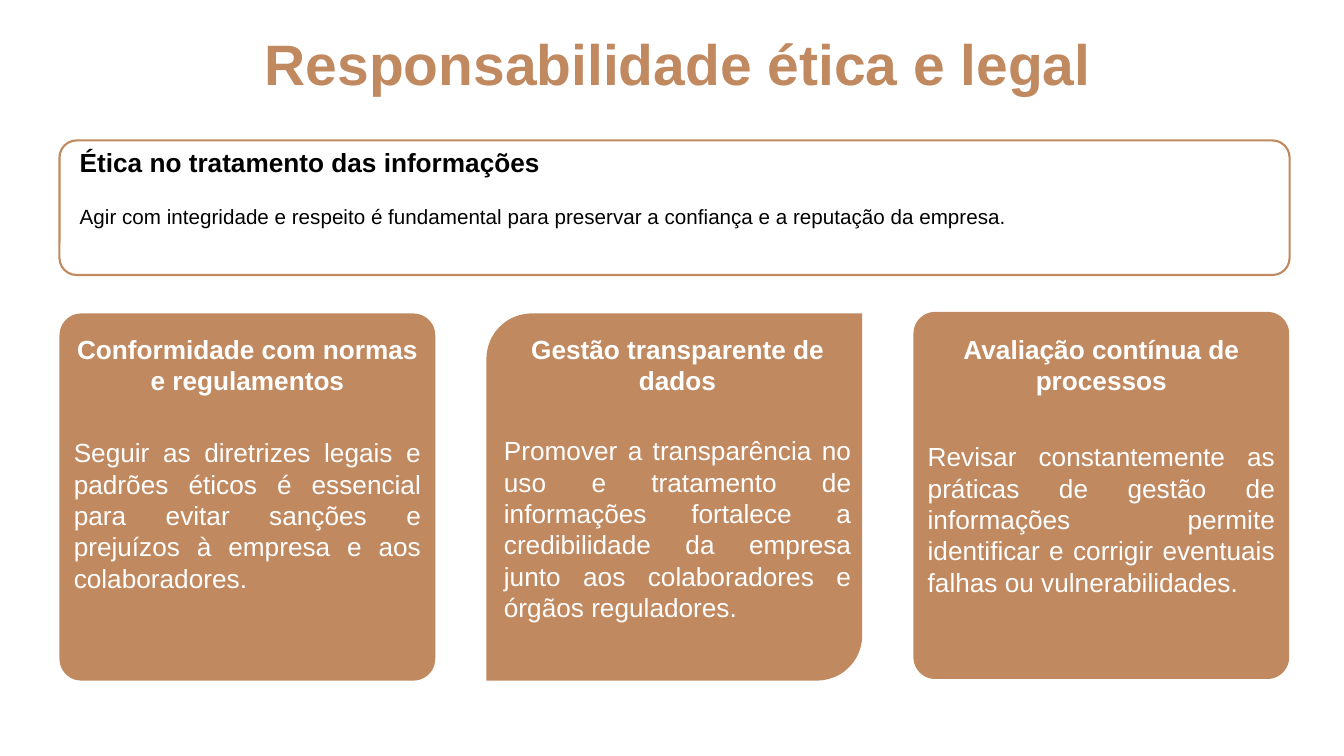
from dataclasses import dataclass

from pptx import Presentation
from pptx.dml.color import RGBColor
from pptx.enum.shapes import MSO_SHAPE as SHAPE
from pptx.enum.text import MSO_AUTO_SIZE as AUTO, PP_ALIGN as ALIGN
from pptx.util import Cm, Pt


@dataclass(frozen=True)
class Theme:
    font: str = "Arial"
    accent: RGBColor = RGBColor(0xC1, 0x89, 0x60)
    dark: RGBColor = RGBColor(0, 0, 0)
    light: RGBColor = RGBColor(0xFF, 0xFF, 0xFF)
    title: float = 40.7
    heading: float = 18.7
    note: float = 14.7
    line: float = 1.5


class Builder:
    def __init__(self, slide, theme):
        self.s = slide
        self.theme = theme

    def panel(self, kind, x, y, w, h, radius, filled=True):
        sp = self.s.shapes.add_shape(kind, Cm(x), Cm(y), Cm(w), Cm(h))
        sp.adjustments[0] = radius / min(w, h)
        sp.shadow.inherit = False
        if filled:
            sp.fill.solid()
            sp.fill.fore_color.rgb = self.theme.accent
            sp.line.fill.background()
        else:
            sp.fill.background()
            sp.line.color.rgb = self.theme.accent
            sp.line.width = Pt(self.theme.line)

    def text(self, text, x, y, w, h, size, color, align, bold=False, spacing=None):
        tf = self.s.shapes.add_textbox(Cm(x), Cm(y), Cm(w), Cm(h)).text_frame
        tf.word_wrap = True
        tf.auto_size = AUTO.SHAPE_TO_FIT_TEXT
        tf.margin_left = tf.margin_right = Cm(0.36)
        tf.margin_top = tf.margin_bottom = Cm(0.36)
        tf.text = text
        p = tf.paragraphs[0]
        p.alignment = align
        p.space_before = Pt(5)
        if spacing:
            p.line_spacing = spacing
        font = p.runs[0].font
        font.name = self.theme.font
        font.size = Pt(size)
        font.bold = bold
        font.color.rgb = color


ROUND, DIAGONAL = SHAPE.ROUNDED_RECTANGLE, SHAPE.ROUND_2_DIAG_RECTANGLE
LEFT, CARD_W, CARD_H, PITCH = 1.5, 9.47, 9.25, 10.76
TEXT_LEFT, TEXT_W = 1.65, 30.86

# Outline, corner radius, top, text shift, body top, body height, heading, body
CARDS = [
    (ROUND, 0.55, 7.9, 0, 10.64, 4.7, "Conformidade com normas e regulamentos",
     "Seguir as diretrizes legais e padrões éticos é essencial para evitar "
     "sanções e prejuízos à empresa e aos colaboradores."),
    (DIAGONAL, 1.14, 7.9, 0.08, 10.59, 5.51, "Gestão transparente de dados",
     "Promover a transparência no uso e tratamento de informações fortalece a "
     "credibilidade da empresa junto aos colaboradores e órgãos reguladores."),
    (ROUND, 0.55, 7.86, 0, 10.74, 4.7, "Avaliação contínua de processos",
     "Revisar constantemente as práticas de gestão de informações permite "
     "identificar e corrigir eventuais falhas ou vulnerabilidades."),
]


def main():
    prs = Presentation()
    prs.slide_width, prs.slide_height = Cm(33.87), Cm(19.05)
    theme = Theme()
    b = Builder(prs.slides.add_slide(prs.slide_layouts[6]), theme)

    # Title
    b.text("Responsabilidade ética e legal", TEXT_LEFT, 0.69, TEXT_W, 2.13,
           theme.title, theme.accent, ALIGN.CENTER, bold=True, spacing=0.8)

    # Framed introduction
    b.panel(ROUND, LEFT, 3.54, 31, 3.39, 0.43, filled=False)
    b.text("Ética no tratamento das informações", TEXT_LEFT, 3.53, TEXT_W, 1.37,
           theme.heading, theme.dark, ALIGN.LEFT, bold=True, spacing=0.8)
    b.text("Agir com integridade e respeito é fundamental para preservar a "
           "confiança e a reputação da empresa.", TEXT_LEFT, 4.83, TEXT_W, 1.35,
           theme.note, theme.dark, ALIGN.JUSTIFY)

    # Three cards
    for i, (kind, radius, top, shift, body_top, body_h, heading, body) in enumerate(CARDS):
        x = LEFT + i * PITCH
        b.panel(kind, x, top, CARD_W, CARD_H, radius)
        b.text(heading, x + shift, 8.03, CARD_W, 2.31,
               theme.heading, theme.light, ALIGN.CENTER, bold=True)
        b.text(body, x + shift, body_top, CARD_W, body_h,
               theme.heading, theme.light, ALIGN.JUSTIFY)

    prs.save("out.pptx")


if __name__ == "__main__":
    main()
